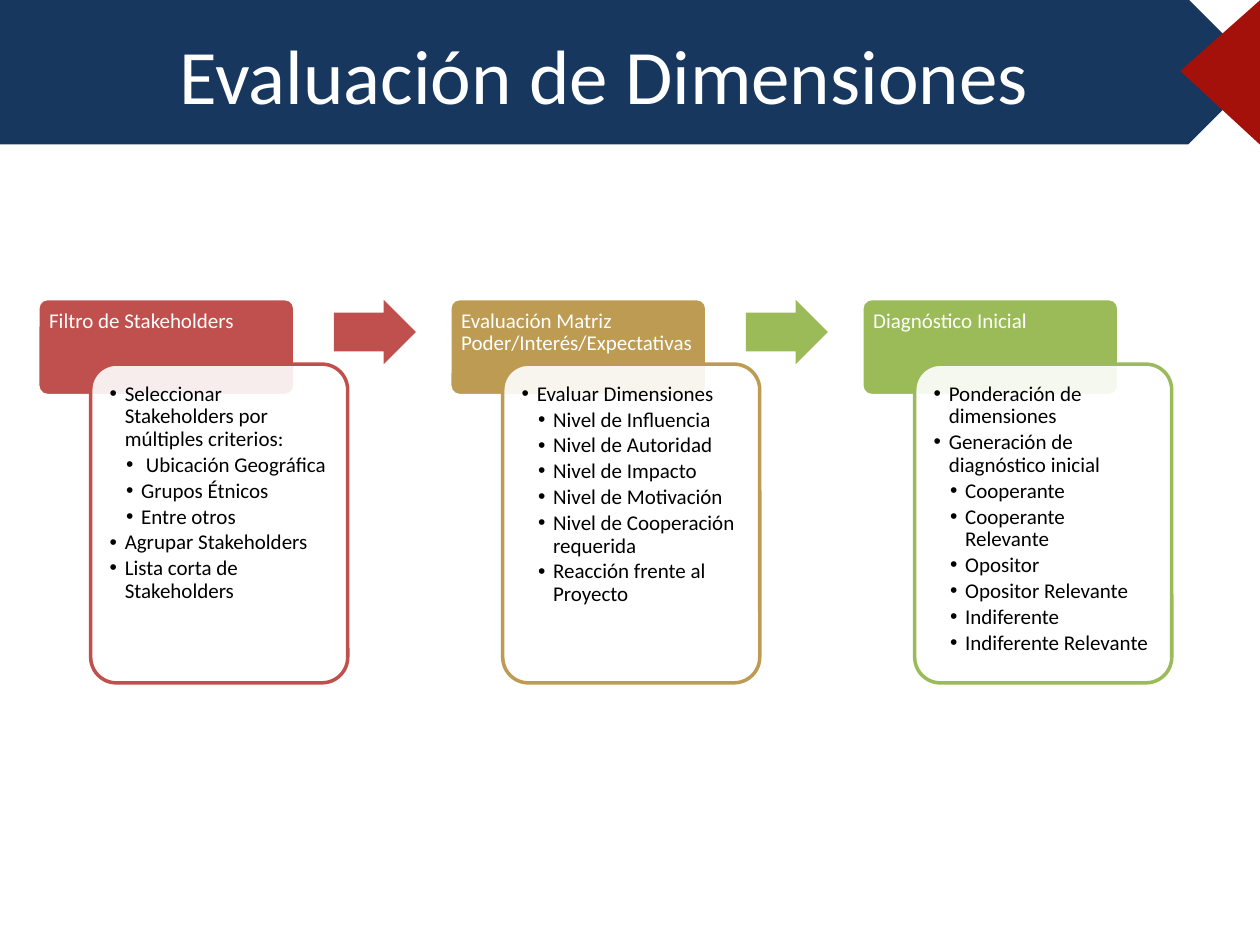
from lxml import etree
from pptx import Presentation
from pptx.dml.color import RGBColor
from pptx.enum.shapes import MSO_SHAPE
from pptx.enum.text import MSO_ANCHOR, PP_ALIGN
from pptx.oxml.ns import qn
from pptx.util import Inches, Pt

PENTAGON = MSO_SHAPE.PENTAGON
TRIANGLE = MSO_SHAPE.ISOSCELES_TRIANGLE
ROUNDED = MSO_SHAPE.ROUNDED_RECTANGLE
ARROW = MSO_SHAPE.RIGHT_ARROW
TOP = MSO_ANCHOR.TOP
CENTER = PP_ALIGN.CENTER

NAVY = RGBColor(0x17, 0x37, 0x5E)
CRIMSON = RGBColor(0xA4, 0x10, 0x0A)
RED = RGBColor(0xC0, 0x50, 0x4D)
GOLD = RGBColor(0xBD, 0x9B, 0x53)
GREEN = RGBColor(0x9B, 0xBB, 0x59)
WHITE = RGBColor(0xFF, 0xFF, 0xFF)
BLACK = RGBColor(0, 0, 0)
FONT = "Calibri"

# Content: heading, colour, colour of the arrow that follows, (level, text) items
TITLE = "Evaluación de Dimensiones"
STAGES = [
    ("Filtro de Stakeholders", RED, RED, [
        (1, "Seleccionar Stakeholders por múltiples criterios:"),
        (2, " Ubicación Geográfica"),
        (2, "Grupos Étnicos"),
        (2, "Entre otros"),
        (1, "Agrupar Stakeholders"),
        (1, "Lista corta de Stakeholders"),
    ]),
    ("Evaluación Matriz Poder/Interés/Expectativas", GOLD, GREEN, [
        (1, "Evaluar Dimensiones"),
        (2, "Nivel de Influencia"),
        (2, "Nivel de Autoridad"),
        (2, "Nivel de Impacto"),
        (2, "Nivel de Motivación"),
        (2, "Nivel de Cooperación requerida"),
        (2, "Reacción frente al Proyecto"),
    ]),
    ("Diagnóstico Inicial", GREEN, None, [
        (1, "Ponderación de dimensiones"),
        (1, "Generación de diagnóstico inicial"),
        (2, "Cooperante"),
        (2, "Cooperante Relevante"),
        (2, "Opositor"),
        (2, "Opositor Relevante"),
        (2, "Indiferente"),
        (2, "Indiferente Relevante"),
    ]),
]

# Layout, in inches
FIRST_LEFT, STAGE_STEP = 0.3, 3.27
HEAD_TOP, CARD_WIDTH, HEAD_HEIGHT = 2.37, 2.04, 0.77
BODY_SHIFT, BODY_TOP, BODY_HEIGHT = 0.42, 2.89, 2.53
BODY_INSET = 0.06
ARROW_SHIFT, ARROW_TOP = 2.35, 2.38
INDENTS = {1: 0.12, 2: 0.25}
HANG = 0.12


def add_block(page, kind, place, fill, line=None, width=2, adjust=()):
    block = page.shapes.add_shape(kind, *map(Inches, place))
    block.shadow.inherit = False
    block.fill.solid()
    block.fill.fore_color.rgb = fill
    if line is None:
        block.line.fill.background()
    else:
        block.line.color.rgb = line
        block.line.width = Pt(width)
    for index, value in enumerate(adjust):
        block.adjustments[index] = value
    return block


def set_opacity(block, percent):
    color = block.fill._xPr.find(qn("a:solidFill"))[0]
    etree.SubElement(color, qn("a:alpha")).set("val", str(percent * 1000))


def add_text_frame(page, place, bottom):
    frame = page.shapes.add_textbox(*map(Inches, place)).text_frame
    frame.word_wrap = True
    frame.vertical_anchor = TOP
    frame.margin_left = frame.margin_right = frame.margin_top = Inches(0.09)
    frame.margin_bottom = Inches(bottom)
    return frame


def write(para, text, size, color):
    span = para.add_run()
    span.text = text
    span.font.name = FONT
    span.font.size = Pt(size)
    span.font.color.rgb = color


def add_bullet(para, level):
    properties = para._p.get_or_add_pPr()
    properties.set("marL", str(Inches(INDENTS[level])))
    properties.set("indent", str(-Inches(HANG)))
    etree.SubElement(properties, qn("a:buFont")).set("typeface", "Arial")
    etree.SubElement(properties, qn("a:buChar")).set("char", "•")


def add_stage(page, left, heading, color, arrow_color, items):
    # Heading tab
    add_block(page, ROUNDED, (left, HEAD_TOP, CARD_WIDTH, HEAD_HEIGHT),
              color, WHITE, adjust=[0.1])
    frame = add_text_frame(page, (left, HEAD_TOP, CARD_WIDTH, 0.51), 0.05)
    para = frame.paragraphs[0]
    para.line_spacing = 0.9
    write(para, heading, 12, WHITE)

    # Card with the bulleted list
    body_left = left + BODY_SHIFT
    card = add_block(page, ROUNDED, (body_left, BODY_TOP, CARD_WIDTH, BODY_HEIGHT),
                     WHITE, color, adjust=[0.1])
    set_opacity(card, 90)
    frame = add_text_frame(page, (body_left + BODY_INSET, BODY_TOP + BODY_INSET,
                                  CARD_WIDTH - 2 * BODY_INSET,
                                  BODY_HEIGHT - 2 * BODY_INSET), 0.09)
    for index, (level, text) in enumerate(items):
        para = frame.add_paragraph() if index else frame.paragraphs[0]
        para.level = level
        para.line_spacing = 0.9
        para.space_after = Pt(1.8)
        add_bullet(para, level)
        write(para, text, 12, BLACK)

    # Arrow to the next stage
    if arrow_color is not None:
        add_block(page, ARROW, (left + ARROW_SHIFT, ARROW_TOP, 0.65, 0.51),
                  arrow_color, adjust=[0.6, 0.5])


def main():
    deck = Presentation()
    deck.slide_width, deck.slide_height = Inches(10), Inches(7.5)
    page = deck.slides.add_slide(deck.slide_layouts[5])

    # Banner
    add_block(page, PENTAGON, (0, 0, 10, 1.14), NAVY, NAVY, 0.75)
    corner = add_block(page, TRIANGLE, (9.12, 0.26, 1.14, 0.63),
                       CRIMSON, CRIMSON, 0.75, [0.51])
    corner.rotation = 270

    # Title, brought in front of the banner
    title = page.shapes.title
    title.left, title.top, title.width, title.height = map(
        Inches, (1.07, 0.17, 7.45, 1.26))
    title.text_frame.vertical_anchor = TOP
    para = title.text_frame.paragraphs[0]
    para.alignment = CENTER
    write(para, TITLE, 44, WHITE)
    page.shapes._spTree.append(title._element)

    # Stages
    for index, stage in enumerate(STAGES):
        add_stage(page, FIRST_LEFT + index * STAGE_STEP, *stage)

    deck.save("out.pptx")


if __name__ == "__main__":
    main()
